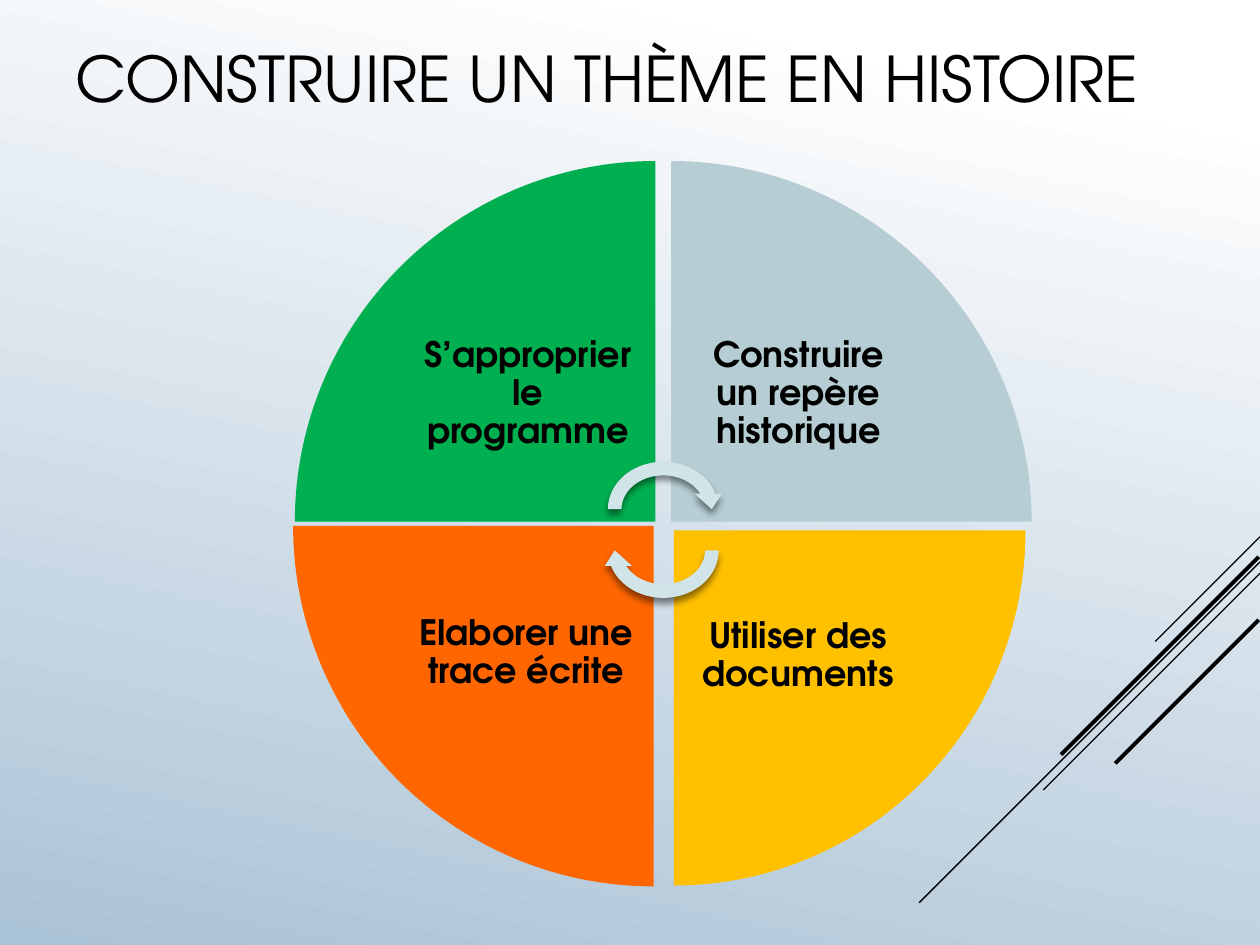
from lxml import etree
from pptx import Presentation
from pptx.dml.color import RGBColor
from pptx.enum.shapes import MSO_CONNECTOR, MSO_SHAPE
from pptx.enum.text import MSO_ANCHOR, PP_ALIGN
from pptx.oxml.ns import qn
from pptx.util import Pt

FONT = "TeX Gyre Adventor"
BLACK = RGBColor(0x00, 0x00, 0x00)
WHITE = RGBColor(0xFF, 0xFF, 0xFF)
SKY = RGBColor(0xAB, 0xC3, 0xD6)
GREEN = RGBColor(0x00, 0xB0, 0x50)
GREY = RGBColor(0xB5, 0xCD, 0xD3)
YELLOW = RGBColor(0xFF, 0xC0, 0x00)
ORANGE = RGBColor(0xFF, 0x66, 0x00)
PALE = RGBColor(0xD1, 0xE5, 0xE8)
LEFT, CENTER = PP_ALIGN.LEFT, PP_ALIGN.CENTER
MIDDLE = MSO_ANCHOR.MIDDLE
STRAIGHT = MSO_CONNECTOR.STRAIGHT
WEDGE, ARROW = MSO_SHAPE.PIE_WEDGE, MSO_SHAPE.CIRCULAR_ARROW

TITLE = "CONSTRUIRE UN THÈME EN HISTOIRE"
# Text, colour, rotation, left, top, width, height; clockwise from top left
STEPS = [
    ("S’approprier le programme", GREEN, 0, 168.5, 92, 206, 206),
    ("Construire un repère historique", GREY, 90, 383.5, 92, 206, 206),
    ("Utiliser des documents", YELLOW, 180, 385, 303, 201, 203),
    ("Elaborer une trace écrite", ORANGE, 270, 167.5, 300.5, 206, 206),
]
ARROWS = [(0, 260), (180, 283.5)]  # rotation, top
# Right end x, y; run down to the left at 45 degrees; line width
DIAGONALS = [
    (720, 306.7, 59.8, 0.75),
    (720, 321.1, 194.8, 0.75),
    (720, 327.6, 123.8, 0.75),
    (719.3, 318.2, 113, 2.25),
    (719.3, 354.2, 82, 2.25),
]
TEXT_SHARE = 0.707  # side of the text square inside a quarter disc


def write(shape, text, size, align, bold=False, margin=None, line_spacing=None, space_after=None):
    frame = shape.text_frame
    frame.word_wrap = True
    frame.vertical_anchor = MIDDLE
    if margin is not None:
        frame.margin_left = frame.margin_right = Pt(margin)
        frame.margin_top = frame.margin_bottom = Pt(margin)
    paragraph = frame.paragraphs[0]
    paragraph.alignment = align
    paragraph.line_spacing = line_spacing
    paragraph.space_after = space_after
    run = paragraph.add_run()
    run.text = text
    run.font.name = FONT
    run.font.size = Pt(size)
    run.font.bold = bold
    run.font.color.rgb = BLACK


def add_filled(slide, kind, box, color, rotation):
    shape = slide.shapes.add_shape(kind, *map(Pt, box))
    shape.rotation = rotation
    shape.shadow.inherit = False
    shape.fill.solid()
    shape.fill.fore_color.rgb = color
    shape.line.fill.background()
    return shape


def add_shadow(shape):
    effects = shape.element.spPr.find(qn("a:effectLst"))
    shadow = etree.SubElement(effects, qn("a:outerShdw"), blurRad=str(Pt(4)),
                              dist=str(Pt(3)), dir="5400000", rotWithShape="0")
    color = etree.SubElement(shadow, qn("a:srgbClr"), val=str(BLACK))
    etree.SubElement(color, qn("a:alpha"), val="46000")


def add_diagonal(slide, x, y, run, width):
    line = slide.shapes.add_connector(STRAIGHT, Pt(x), Pt(y), Pt(x - run), Pt(y + run))
    line.line.color.rgb = BLACK
    line.line.width = Pt(width)
    etree.SubElement(line.element.spPr, qn("a:effectLst"))


def add_step(slide, text, color, rotation, left, top, width, height):
    add_filled(slide, WEDGE, (left, top, width, height), color, rotation)
    text_width, text_height = width * TEXT_SHARE, height * TEXT_SHARE
    # The text square touches the corner at the centre of the disc
    if rotation in (0, 270):
        left += width - text_width
    if rotation in (0, 90):
        top += height - text_height
    box = slide.shapes.add_textbox(Pt(left), Pt(top), Pt(text_width), Pt(text_height))
    write(box, text, 20, CENTER, bold=True, margin=11.5, line_spacing=0.9, space_after=Pt(7))


def set_background(slide):
    fill = slide.background.fill
    fill.gradient()
    fill.gradient_angle = 360 - 102
    for stop, position, color in zip(fill.gradient_stops, (0.1, 1), (WHITE, SKY)):
        stop.position = position
        stop.color.rgb = color


def main():
    presentation = Presentation()
    presentation.slide_width, presentation.slide_height = Pt(720), Pt(540)
    slide = presentation.slides.add_slide(presentation.slide_layouts[5])
    set_background(slide)

    title = slide.shapes.title
    title.left, title.top, title.width, title.height = map(Pt, (36, 22.5, 648, 43))
    write(title, TITLE, 36, LEFT)

    for diagonal in DIAGONALS:
        add_diagonal(slide, *diagonal)
    for step in STEPS:
        add_step(slide, *step)
    for rotation, top in ARROWS:
        add_shadow(add_filled(slide, ARROW, (343.5, top, 71, 62), PALE, rotation))

    presentation.save("out.pptx")


if __name__ == "__main__":
    main()
